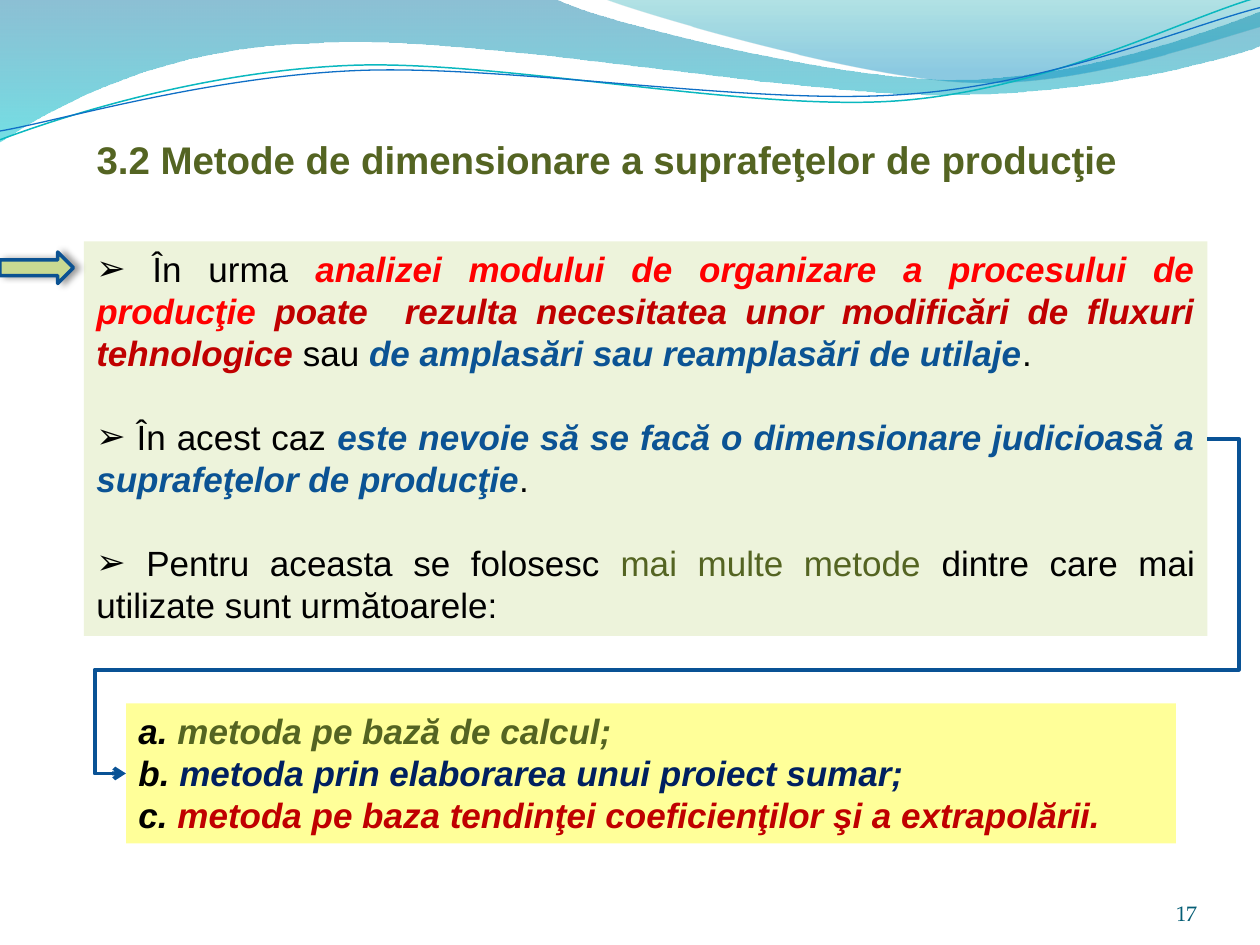
import math

from pptx import Presentation
from pptx.dml.color import RGBColor
from pptx.enum import shapes as sh, text as tx
from pptx.oxml import parse_xml
from pptx.oxml.ns import nsdecls, qn
from pptx.util import Pt

SANS, SERIF = "Arial", "TeX Gyre Pagella"
OLIVE, BLUE, RED, BLACK = "546422", "0B5394", "C00000", "000000"
PLAIN, STRONG = False, True
UNIT = Pt(0.72)  # wave grid: a hundredth of an inch


def rgb(code):
    return RGBColor.from_string(code)


def node(tag, attrs="", inner=""):
    return parse_xml(f"<a:{tag} {nsdecls('a')} {attrs}>{inner}</a:{tag}>")


def add_run(par, words, color, size=20, font=SANS, bold=False, slant=False):
    run = par.add_run()
    run.text = words
    face = run.font
    face.name, face.size, face.bold, face.italic = font, Pt(size), bold, slant
    face.color.rgb = rgb(color)


def frame(shape, anchor=tx.MSO_ANCHOR.TOP):
    body = shape.text_frame
    body.word_wrap = True
    body.auto_size = tx.MSO_AUTO_SIZE.NONE
    body.vertical_anchor = anchor
    return body


# Header waves: steps of one point (line) or three points (Bezier curve)
def add_wave(slide, box, steps, closed, turn=0):
    left, top, wide, high = box
    mid_x, mid_y = left + wide / 2, top + high / 2
    sin, cos = math.sin(math.radians(-turn)), math.cos(math.radians(-turn))
    pen = slide.shapes.build_freeform(left, top, scale=UNIT)
    pen.add_line_segments([(left + wide, top + high)], close=False)
    shape = pen.convert_to_shape()
    shape.shadow.inherit = False
    shape.rotation = turn
    way = next(shape._element.spPr.iter(qn("a:path")))
    way.set("w", str(wide * UNIT))
    way.set("h", str(high * UNIT))
    for old in list(way):
        way.remove(old)

    def spot(x, y):
        dx, dy = x - mid_x, y - mid_y
        px = round((dx * cos - dy * sin + wide / 2) * UNIT)
        py = round((dx * sin + dy * cos + high / 2) * UNIT)
        return f'<a:pt x="{px}" y="{py}"/>'

    for i, step in enumerate(steps):
        tag = "cubicBezTo" if len(step) == 3 else "lnTo" if i else "moveTo"
        way.append(node(tag, inner="".join(spot(*pt) for pt in step)))
    if closed:
        way.append(node("close"))
    return shape


def add_band(slide, box, steps, stops):
    shape = add_wave(slide, box, steps, True)
    shape.line.fill.background()
    shape.fill.gradient()
    shape.fill.gradient_angle = 270
    for stop, (pos, color, _) in zip(shape.fill.gradient_stops, stops):
        stop.position = pos
        stop.color.rgb = rgb(color)
    clrs = list(shape._element.spPr.iter(qn("a:srgbClr")))
    for clr, (_, _, alpha) in zip(clrs, stops):
        clr.append(node("alpha", f'val="{alpha * 1000}"'))


def add_thread(slide, box, steps, color, width):
    shape = add_wave(slide, box, steps, False, 357.3)
    shape.fill.background()
    shape.line.color.rgb = rgb(color)
    shape.line.width = Pt(width)


def add_header(slide):
    add_band(slide, (-1, -1, 1002, 114), [
        [(0, 0)], [(440, -1)],
        [(476, 17), (664, 63), (758, 63)], [(853, 63), (958, 26), (1000, 9)],
        [(1001, 36)],
        [(983, 44), (870, 76), (746, 75)], [(622, 75), (382, 28), (257, 34)],
        [(129, 36), (46, 83), (-1, 113)], [(0, 0)],
    ], [(0, "0074A1", 45), (1, "00C6CF", 55)])
    add_band(slide, (479, -1, 521, 70), [
        [(479, -1)],
        [(509, 11), (682, 62), (769, 65)], [(856, 69), (961, 32), (1000, 21)],
        [(1000, 0)], [(479, -1)],
    ], [(0, "00A1A9", 30), (0.8, "008BBF", 45)])
    add_thread(slide, (-2, 22, 1002, 71), [
        [(0, 111)],
        [(48, 93), (158, 57), (277, 52)], [(395, 47), (593, 89), (713, 80)],
        [(833, 71), (938, 15), (998, -2)],
    ], "0AB8BF", 0.85)
    add_thread(slide, (-2, 30, 1003, 58), [
        [(0, 104)],
        [(47, 96), (164, 61), (283, 56)], [(403, 51), (597, 84), (717, 75)],
        [(836, 67), (941, 21), (1000, 6)],
    ], "0F6FC6", 0.75)


def add_title(slide, box):
    title = slide.shapes.title
    title.left, title.top, title.width, title.height = map(Pt, box)
    par = frame(title).paragraphs[0]
    par.alignment = tx.PP_ALIGN.LEFT
    add_run(par, "3.2", OLIVE, 22, bold=True)
    add_run(par, " ", BLACK, 24, SERIF, True)
    add_run(par, "Metode de dimensionare a suprafeţelor de producţie", OLIVE, 22, bold=True)


def add_panel(slide, box, fill, paras, gap=0, bullet=None):
    panel = slide.shapes.add_shape(sh.MSO_SHAPE.RECTANGLE, *map(Pt, box))
    panel.shadow.inherit = False
    panel.fill.solid()
    panel.fill.fore_color.rgb = rgb(fill)
    panel.line.fill.background()
    body = frame(panel)
    for i, runs in enumerate(paras):
        par = body.add_paragraph() if i else body.paragraphs[0]
        par.alignment = tx.PP_ALIGN.JUSTIFY
        par.line_spacing = Pt(24)
        par.space_before = Pt(gap if i else 0)
        if bullet:
            props = par._p.get_or_add_pPr()
            props.append(node("buFont", f'typeface="{SANS}"'))
            props.append(node("buChar", f'char="{bullet}"'))
        for words, color, strong in runs:
            add_run(par, words, color, bold=strong, slant=strong)
    return panel


def add_arrow(slide, box):
    arrow = slide.shapes.add_shape(sh.MSO_SHAPE.RIGHT_ARROW, *map(Pt, box))
    arrow.fill.solid()
    arrow.fill.fore_color.rgb = rgb("C9DA92")
    arrow.line.color.rgb = rgb("0B5292")
    arrow.line.width = Pt(2)
    shade = node("outerShdw", f'blurRad="{Pt(4)}" dist="{Pt(3)}" dir="0"',
                 '<a:srgbClr val="000000"><a:alpha val="40000"/></a:srgbClr>')
    arrow.shadow.inherit = False
    arrow._element.spPr.find(qn("a:effectLst")).append(shade)


def add_link(slide, source, target):
    link = slide.shapes.add_connector(sh.MSO_CONNECTOR.ELBOW, 0, 0, 0, 0)
    link.begin_connect(source, 3)
    link.end_connect(target, 1)
    link.line.color.rgb = rgb("095295")
    link.line.width = Pt(2.25)
    props = link._element.spPr
    props.find(qn("a:ln")).append(node("tailEnd", 'type="arrow"'))
    props.append(node("effectLst"))
    # Five-part elbow: out to the right, back between the boxes, in from the left
    geom = props.find(qn("a:prstGeom"))
    geom.set("prst", "bentConnector5")
    bends = geom.get_or_add_avLst()
    for i, val in enumerate((-2900, 69000, 102900), 1):
        bends.append(node("gd", f'name="adj{i}" fmla="val {val}"'))


def add_number(slide, box):
    label = slide.shapes.add_textbox(*map(Pt, box))
    body = frame(label, tx.MSO_ANCHOR.BOTTOM)
    body.margin_left = body.margin_right = body.margin_top = body.margin_bottom = 0
    par = body.paragraphs[0]
    par.alignment = tx.PP_ALIGN.RIGHT
    add_run(par, "17", "045D75", 12, SERIF)


POINTS = [
    [(" În urma ", BLACK, PLAIN),
     ("analizei modului de organizare a procesului de producţie ", "FF0000", STRONG),
     ("poate  rezulta necesitatea unor modificări de fluxuri tehnologice ", RED, STRONG),
     ("sau ", BLACK, PLAIN), ("de amplasări sau reamplasări de utilaje", BLUE, STRONG),
     (". ", BLACK, PLAIN)],
    [(" În acest caz ", BLACK, PLAIN),
     ("este nevoie să se facă o dimensionare judicioasă a suprafeţelor de producţie",
      BLUE, STRONG), (". ", BLACK, PLAIN)],
    [(" Pentru aceasta se folosesc ", BLACK, PLAIN), ("mai multe metode ", OLIVE, PLAIN),
     ("dintre care mai utilizate sunt următoarele:", BLACK, PLAIN)],
]
METHODS = [[(mark, BLACK, STRONG), (words, color, STRONG)] for mark, words, color in (
    ("a. ", "metoda pe bază de calcul;", OLIVE),
    ("b. ", "metoda prin elaborarea unui proiect sumar;", "002060"),
    ("c. ", "metoda pe baza tendinţei coeficienţilor şi a extrapolării.", RED))]


def main():
    deck = Presentation()
    deck.slide_width, deck.slide_height = Pt(720), Pt(540)
    slide = deck.slides.add_slide(deck.slide_layouts[5])
    add_header(slide)
    add_number(slide, (624, 500.5, 60, 28.75))
    points = add_panel(slide, (48, 138, 642, 225.4), "EDF3DB", POINTS, 24, "➢")
    add_title(slide, (48, 72, 642, 36))
    add_arrow(slide, (0, 144, 42, 18))
    methods = add_panel(slide, (72, 402, 600, 80), "FFFF99", METHODS)
    add_link(slide, points, methods)
    deck.save("out.pptx")


if __name__ == "__main__":
    main()
